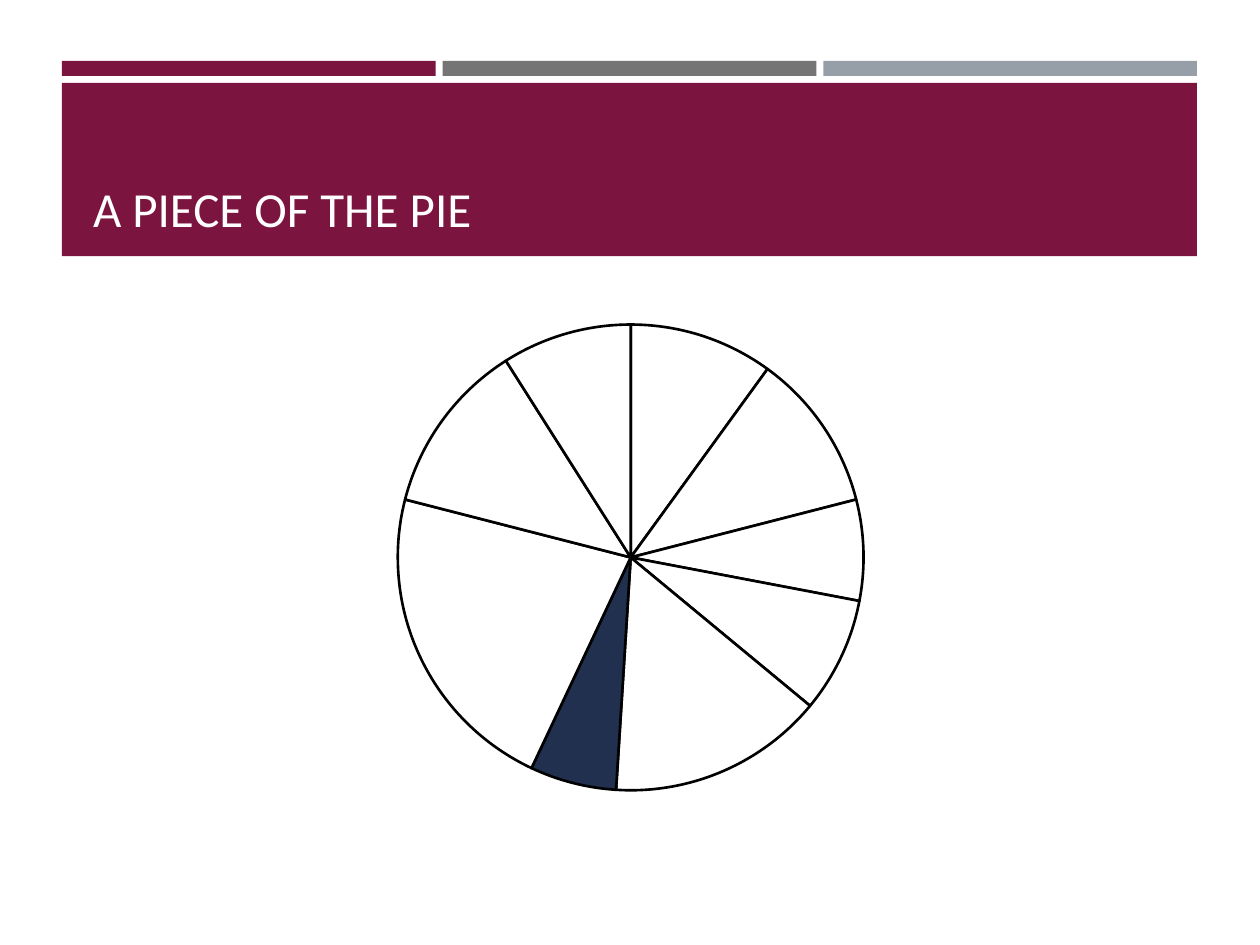
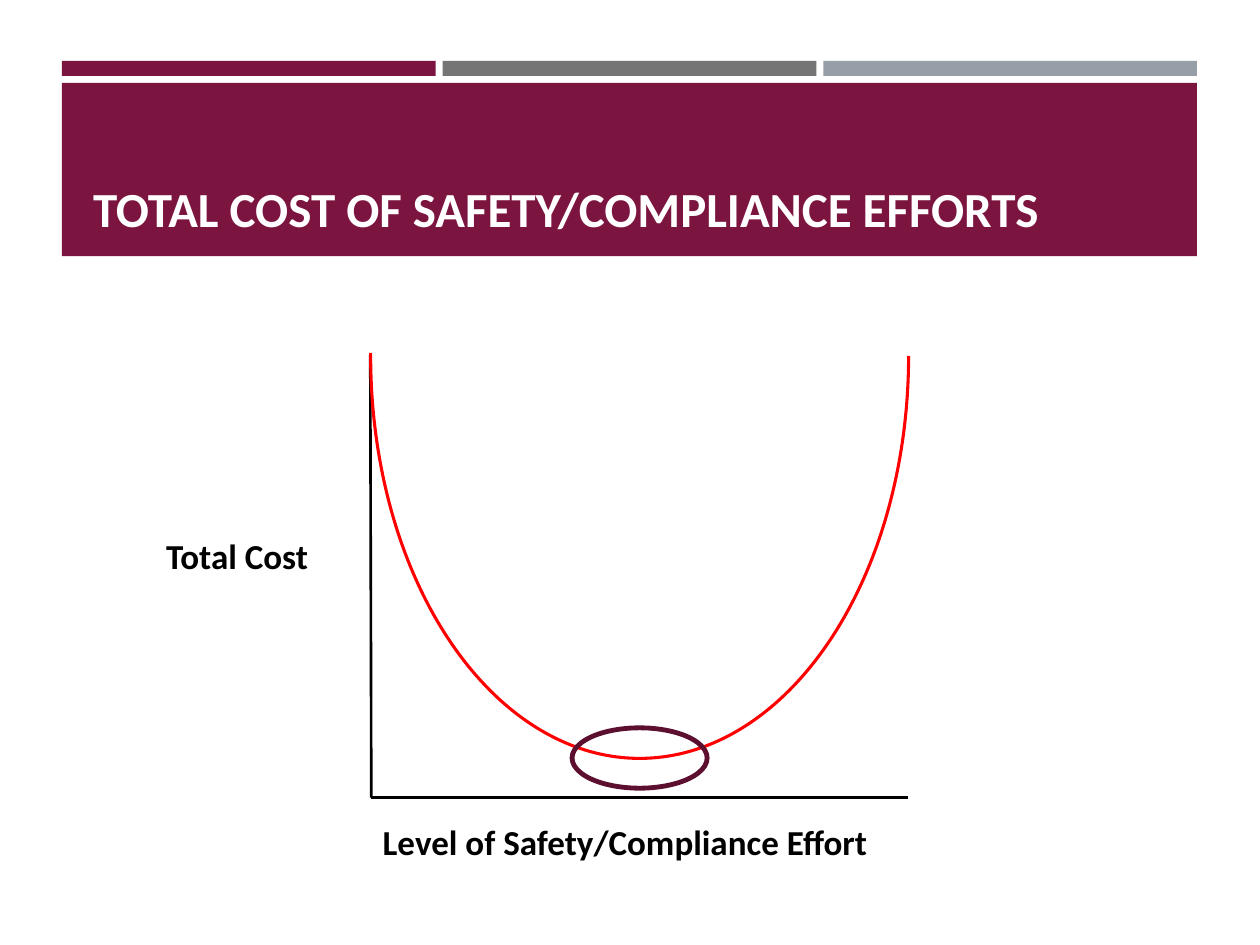
from collections import namedtuple

from lxml import etree
from pptx import Presentation
from pptx import util as u
from pptx.chart.data import CategoryChartData
from pptx.dml.color import RGBColor
from pptx.enum import chart as charts, shapes, text
from pptx.oxml import parse_xml
from pptx.oxml.ns import nsdecls, qn

COLORS = {
    "wine": "7C1440",
    "grey": "757575",
    "steel": "969FA7",
    "navy": "20304E",
    "plum": "5C0F2F",
    "red": "FF0000",
    "black": "000000",
    "white": "FFFFFF",
}
FONT = "Calibri"

Box = namedtuple("Box", "left top width height")
HEADER = Box(35.4, 34.8, 648.6, 111.6)
PIE = Box(46.1, 175.7, 629.3, 285.8)
COST = Box(87.8, 203, 454.2, 293.8)


def color(name):
    return RGBColor.from_string(COLORS[name])


def points(*lengths):
    return [u.Pt(length) for length in lengths]


def add_figure(page, kind, box, fill=None, line=None, weight=1):
    figure = page.shapes.add_shape(kind, *points(*box))
    figure.shadow.inherit = False
    if fill:
        figure.fill.solid()
        figure.fill.fore_color.rgb = color(fill)
    else:
        figure.fill.background()
    if line:
        figure.line.color.rgb = color(line)
        figure.line.width = u.Pt(weight)
    else:
        figure.line.fill.background()
    return figure


def add_line(page, start, end):
    line = page.shapes.add_connector(
        shapes.MSO_CONNECTOR.STRAIGHT, *points(*start, *end))
    line.line.color.rgb = color("black")
    line.line.width = u.Pt(1.5)
    etree.SubElement(line._element.spPr, qn("a:effectLst"))


def add_text(page, box, words, size, ink, bold, anchor=text.MSO_ANCHOR.TOP):
    frame = page.shapes.add_textbox(*points(*box)).text_frame
    frame.word_wrap = True
    frame.vertical_anchor = anchor
    frame.text = words
    font = frame.paragraphs[0].runs[0].font
    font.name, font.size, font.bold = FONT, u.Pt(size), bold
    font.color.rgb = color(ink)


def add_header(page, box, title, bold):
    gap, bar_height, band_top = 4, 8.6, 12.6
    bar_width = (box.width - 2 * gap) / 3
    for index, fill in enumerate(("wine", "grey", "steel")):
        bar = Box(box.left + index * (bar_width + gap), box.top,
                  bar_width, bar_height)
        add_figure(page, shapes.MSO_SHAPE.RECTANGLE, bar, fill)
    band = Box(box.left, box.top + band_top, box.width, box.height - band_top)
    add_figure(page, shapes.MSO_SHAPE.RECTANGLE, band, fill="wine")
    title_box = Box(band.left + 10.7, band.top + 6.7, 629.3, 85)
    add_text(page, title_box, title, 28, "white", bold, text.MSO_ANCHOR.BOTTOM)


def center_plot(chart, box, diameter):
    width, height = diameter / box.width, diameter / box.height
    sizes = {"x": (1 - width) / 2, "y": (1 - height) / 2,
             "w": width, "h": height}
    modes = '<c:xMode val="edge"/><c:yMode val="edge"/>'
    values = "".join(f'<c:{key} val="{size:.3f}"/>'
                     for key, size in sizes.items())
    layout = parse_xml(
        f'<c:layout {nsdecls("c")}><c:manualLayout>'
        f'<c:layoutTarget val="inner"/>{modes}{values}'
        '</c:manualLayout></c:layout>')
    area = chart._chartSpace.chart.plotArea
    for old in area.findall(qn("c:layout")):
        area.remove(old)
    area.insert(0, layout)


def add_pie(page, box):
    shares = (10, 11, 7, 8, 15, 6, 22, 12, 9)
    highlighted = 5
    data = CategoryChartData()
    data.categories = [str(number + 1) for number in range(len(shares))]
    data.add_series("Series 1", shares)
    chart = page.shapes.add_chart(
        charts.XL_CHART_TYPE.PIE, *points(*box), data).chart
    chart.has_legend = False
    chart.has_title = False
    chart.font.name, chart.font.size = FONT, u.Pt(10)
    chart.font.color.rgb = color("black")
    plot = chart.plots[0]
    plot.vary_by_categories = False
    for index in range(len(shares)):
        form = plot.series[0].points[index].format
        form.fill.solid()
        form.fill.fore_color.rgb = color(
            "navy" if index == highlighted else "white")
        form.line.color.rgb = color("black")
        form.line.width = u.Pt(1.5)
    center_plot(chart, box, 266.4)


def add_cost_curve(page, box):
    axis_left, axis_right = box.left + 124.4, box.left + 431.3
    axis_bottom = box.top + 252.8
    add_line(page, (axis_left - 0.6, box.top), (axis_left, axis_bottom))
    add_line(page, (axis_right, axis_bottom), (axis_left, axis_bottom))

    span, reach = 307.4, 460
    middle = box.left + 277.7
    curve_box = Box(middle - reach / 2, box.top + 0.4 - span / 2, reach, span)
    curve = add_figure(page, shapes.MSO_SHAPE.ARC, curve_box,
                       line="red", weight=1.75)
    curve.adjustments[0] = 162
    curve.adjustments[1] = 54.375
    curve.rotation = 90

    add_text(page, Box(box.left, box.top + 98.7, 111.6, 31.7),
             "Total Cost", 20, "black", True)
    add_text(page, Box(axis_left - 0.6, box.top + 262.1, 330.5, 31.7),
             "Level of Safety/Compliance Effort", 20, "black", True)
    add_figure(page, shapes.MSO_SHAPE.OVAL,
               Box(middle - 38.6, box.top + 212.9, 77.2, 34.5),
               line="plum", weight=2.75)


def main():
    deck = Presentation()
    deck.slide_width, deck.slide_height = points(720, 540)
    contents = (
        ("A PIECE OF THE PIE", False, add_pie, PIE),
        ("TOTAL COST OF SAFETY/COMPLIANCE EFFORTS", True,
         add_cost_curve, COST),
    )
    for title, bold, add_body, box in contents:
        page = deck.slides.add_slide(deck.slide_layouts[6])
        add_header(page, HEADER, title, bold)
        add_body(page, box)
    deck.save("out.pptx")


if __name__ == "__main__":
    main()
